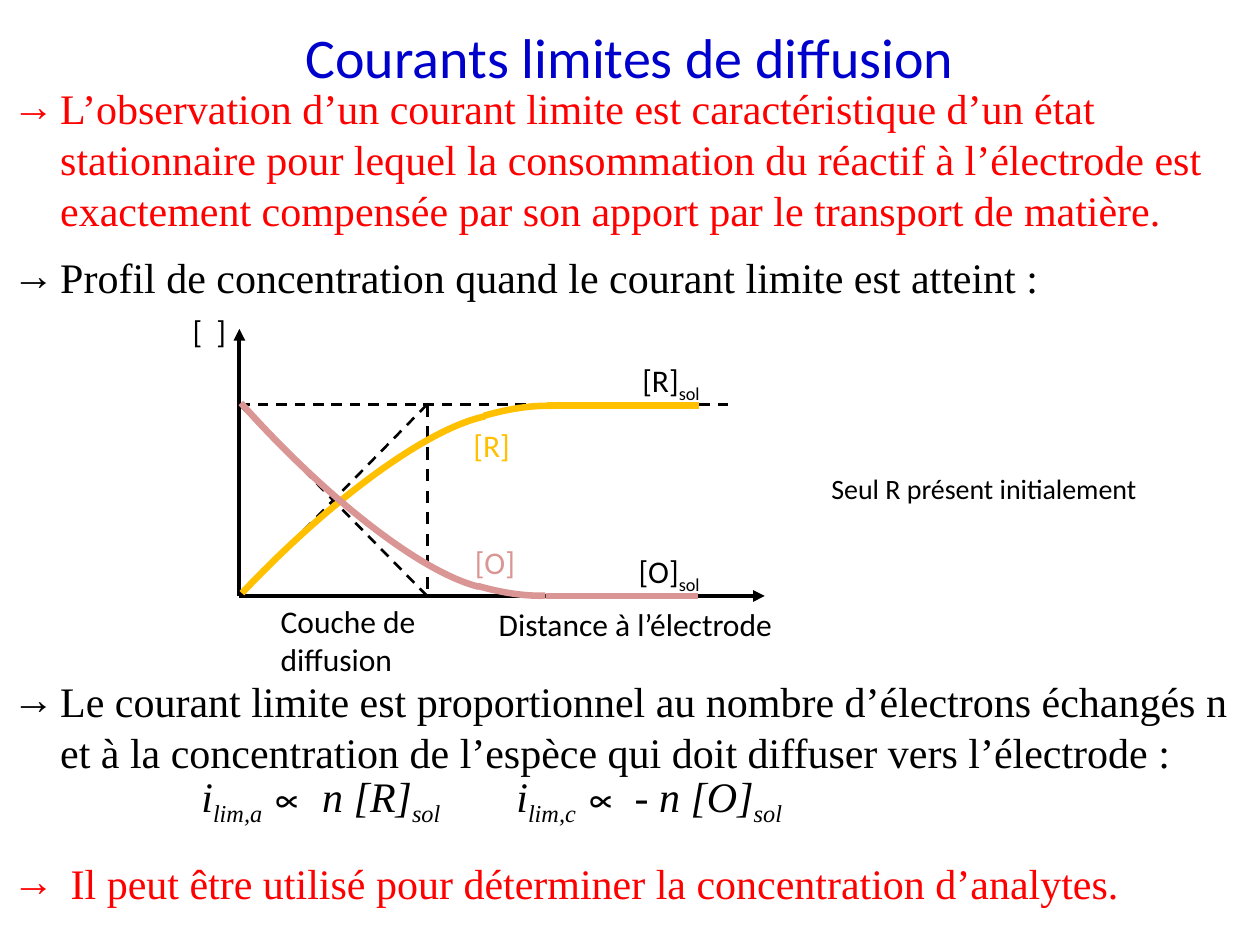
from lxml.etree import SubElement
from pptx import Presentation
from pptx.dml.color import RGBColor
from pptx.enum.dml import MSO_LINE
from pptx.enum.shapes import MSO_CONNECTOR, MSO_SHAPE
from pptx.enum.text import PP_ALIGN
from pptx.oxml.ns import qn
from pptx.util import Inches, Pt

BLACK = RGBColor(0x00, 0x00, 0x00)
RED = RGBColor(0xFF, 0x00, 0x00)
BLUE = RGBColor(0x00, 0x00, 0xCC)
GOLD = RGBColor(0xFF, 0xC0, 0x00)
PINK = RGBColor(0xD9, 0x96, 0x94)

SERIF, SANS, SYMBOL = "Times New Roman", "Calibri", "Arial"
WIDTH, HEIGHT = 10, 7.5
LEFT, BASE, SOL, LAYER = 1.9, 4.73, 3.21, 3.39
LINE_PITCH = 29.15

TITLE = "Courants limites de diffusion"

# kind of each formula part: "main", "sub" or "symbol"
FORMULA = [
    ("\t\ti", "main"), ("lim,a ", "sub"), ("∝ ", "symbol"), ("n [R]", "main"),
    ("sol \t\t", "sub"), ("i", "main"), ("lim,c ", "sub"), ("∝", "symbol"),
    (" - n [O]", "main"), ("sol", "sub"),
]
STATEMENTS = [
    ("L’observation d’un courant limite est caractéristique d’un état stationnaire "
     "pour lequel la consommation du réactif à l’électrode est exactement compensée "
     "par son apport par le transport de matière.", RED, 0),
    ("Profil de concentration quand le courant limite est atteint :", BLACK, 9.1),
    ("Le courant limite est proportionnel au nombre d’électrons échangés n et à la "
     "concentration de l’espèce qui doit diffuser vers l’électrode :", BLACK, 213),
    (FORMULA, BLACK, 0),
    (" Il peut être utilisé pour déterminer la concentration d’analytes.", RED, 16.6),
]
LABELS = [
    (["Couche de", "diffusion"], (2.13, 4.73, 1.5, 0.71), 18),
    (["[  ]"], (1.43, 2.43, 0.94, 0.4), 18),
    ([[("[R]", "main"), ("sol", "sub")]], (5, 2.82, 1.17, 0.4), 18),
    ([[("[O]", "main"), ("sol", "sub")]], (4.97, 4.33, 1.17, 0.4), 18),
    (["Distance à l’électrode"], (3.86, 4.75, 3.08, 0.4), 18),
    (["Seul R présent initialement"], (6.5, 3.69, 3.28, 0.64), 16),
]
DASHES = [
    ((LEFT, SOL), (5.84, SOL), 1.5),
    ((LEFT, SOL), (LAYER, BASE), 1.5),
    ((LEFT, BASE), (LAYER, SOL), 1.5),
    ((LAYER, SOL), (LAYER, BASE), 1.75),
]
AXES = [((LEFT, BASE), (LEFT, 2.61)), ((LEFT, BASE), (6.07, BASE))]
STEEP_END, BEND_END = 212.22, 205.38
CURVES = [
    {"color": GOLD, "flip": False, "plateau": ((4.34, 3.22), (5.55, 3.22)),
     "arcs": [((3.16, 3.29, 1.5, 0.49), 343.8, BEND_END),
              ((-0.1, 4.49, 5.05, 1.39), 313.4, STEEP_END)],
     "label": ("[R]", (3.66, 3.33, 0.6, 0.4))},
    {"color": PINK, "flip": True, "plateau": ((4.33, BASE), (5.54, BASE)),
     "arcs": [((-0.1, 2.04, 5.06, 1.39), 48.2, STEEP_END),
              ((3.11, 4.17, 1.5, 0.49), 16, BEND_END)],
     "label": ("[O]", (3.67, 4.26, 0.66, 0.4))},
]


def write(paragraph, content, size=18, font=SANS, color=BLACK, italic=False):
    parts = [(content, "main")] if isinstance(content, str) else content
    for words, kind in parts:
        run = paragraph.add_run()
        run.text = words
        run.font.size = Pt(size)
        run.font.name = SYMBOL if kind == "symbol" else font
        run.font.italic = italic and kind != "symbol"
        run.font.color.rgb = color
        if kind == "sub":
            run.font._element.set("baseline", "-25000")


def add_box(slide, box, lines=(), align=PP_ALIGN.LEFT, **style):
    frame = slide.shapes.add_textbox(*map(Inches, box)).text_frame
    frame.word_wrap = True
    for index, line in enumerate(lines):
        paragraph = frame.add_paragraph() if index else frame.paragraphs[0]
        paragraph.alignment = align
        write(paragraph, line, **style)
    return frame


def add_statements(slide):
    frame = add_box(slide, (0, 0.6, WIDTH, 6.66))
    for index, (content, color, gap) in enumerate(STATEMENTS):
        paragraph = frame.add_paragraph() if index else frame.paragraphs[0]
        paragraph.line_spacing = Pt(LINE_PITCH)
        paragraph.space_before = Pt(gap)
        props = paragraph._p.get_or_add_pPr()
        formula = content is FORMULA
        props.set("marL", str(Inches(0.5 if formula else 0.38)))
        props.set("indent", str(Inches(0 if formula else -0.38)))
        if not formula:
            SubElement(props, qn("a:buFont"), typeface=SERIF)
            SubElement(props, qn("a:buChar"), char="→")
        write(paragraph, content, size=24, font=SERIF, color=color, italic=formula)


def add_line(slide, start, end, width, color=BLACK, dashed=False, arrow=False):
    line = slide.shapes.add_connector(
        MSO_CONNECTOR.STRAIGHT, *map(Inches, (*start, *end)))
    line.line.width = Pt(width)
    line.line.color.rgb = color
    if dashed:
        line.line.dash_style = MSO_LINE.DASH
    if arrow:
        SubElement(line.line._get_or_add_ln(), qn("a:tailEnd"), type="triangle")
    SubElement(line._element.spPr, qn("a:effectLst"))


def add_curve(slide, curve):
    for box, rotation, end in curve["arcs"]:
        arc = slide.shapes.add_shape(MSO_SHAPE.ARC, *map(Inches, box))
        arc.adjustments[0], arc.adjustments[1] = 162, end
        arc.rotation = rotation
        arc.shadow.inherit = False
        arc.fill.background()
        arc.line.color.rgb = curve["color"]
        arc.line.width = Pt(3.75)
        if curve["flip"]:
            arc._element.spPr.xfrm.set("flipV", "1")
    add_line(slide, *curve["plateau"], 3.75, color=curve["color"])
    words, box = curve["label"]
    add_box(slide, box, [words], color=curve["color"])


def main():
    deck = Presentation()
    deck.slide_width, deck.slide_height = Inches(WIDTH), Inches(HEIGHT)
    slide = deck.slides.add_slide(deck.slide_layouts[6])
    add_statements(slide)
    for start, end, width in DASHES:
        add_line(slide, start, end, width, dashed=True)
    for start, end in AXES:
        add_line(slide, start, end, 2.25, arrow=True)
    for lines, box, size in LABELS:
        add_box(slide, box, lines, size=size)
    add_box(slide, (0, 0.13, WIDTH, 0.64), [TITLE], PP_ALIGN.CENTER, size=32, color=BLUE)
    for curve in CURVES:
        add_curve(slide, curve)
    deck.save("out.pptx")


if __name__ == "__main__":
    main()
